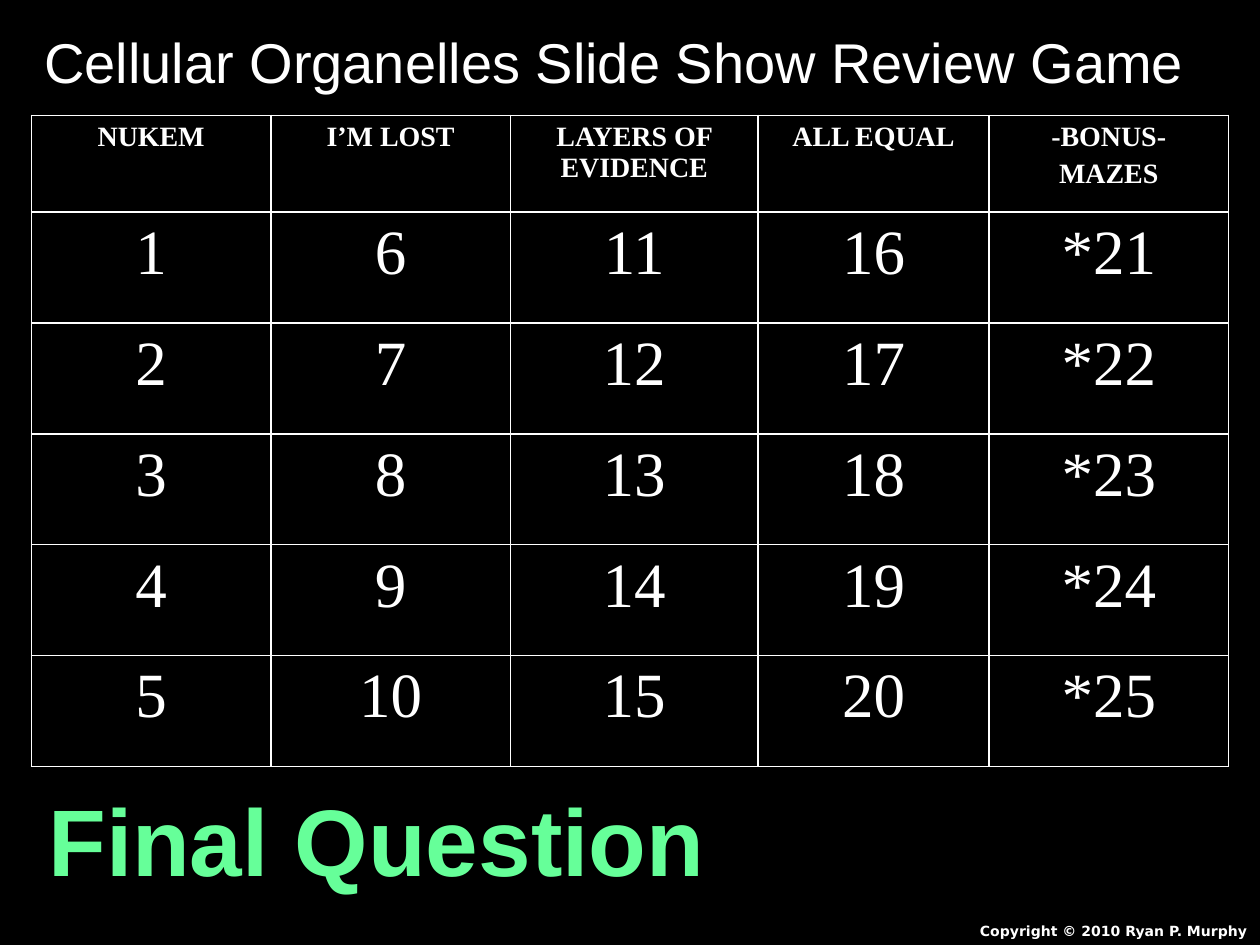
from lxml import etree
from pptx import Presentation
from pptx.dml.color import RGBColor
from pptx.enum.text import MSO_ANCHOR, PP_ALIGN
from pptx.oxml.ns import qn
from pptx.util import Pt

LEFT, MID, RIGHT = PP_ALIGN.LEFT, PP_ALIGN.CENTER, PP_ALIGN.RIGHT
TOP = MSO_ANCHOR.TOP

# Content
TITLE = "Cellular Organelles Slide Show Review Game"
HEADS = ["NUKEM", "I’M LOST", "LAYERS OF EVIDENCE", "ALL EQUAL",
         "-BONUS-\nMAZES"]
ROWS = 5
FINAL = "Final Question"
CREDIT = "Copyright © 2010 Ryan P. Murphy"

# Theme
WHITE, BLACK, GREEN = "FFFFFF", "000000", "66FF99"
THEME = {
    "title": dict(name="Arial", size=32, color=WHITE, bold=False),
    "head": dict(name="Times New Roman", size=16, color=WHITE, bold=True),
    "num": dict(name="Times New Roman", size=36, color=WHITE, bold=False),
    "final": dict(name="Arial", size=54, color=GREEN, bold=True),
    "credit": dict(name="DejaVu Sans", size=8, color=WHITE, bold=True),
}

# Layout, in points
WIDE, HIGH = 720, 540
TITLE_BOX = (18, 12.24, 702, 45.36)
FINAL_BOX = (18.72, 443.52, 393.12, 72.72)
CREDIT_BOX = (509.76, 523.44, 210.24, 16.56)
GRID_X, GRID_Y = 18, 66
COLS = [136.8, 136.8, 141.6, 132, 136.8]
HEAD_H, ROW_H = 55.2, 63.36
GAP = 0.2  # space before a table paragraph, as a share of type size


def write(frame, text, style, align, gap=0):
    """Fill a text frame and style each of its paragraphs."""
    look = THEME[style]
    frame.text = text
    for para in frame.paragraphs:
        para.alignment = align
        para.space_before = Pt(look["size"] * gap)
        font = para.runs[0].font
        values = {"name": look["name"], "size": Pt(look["size"]),
                  "bold": look["bold"]}
        for key, value in values.items():
            setattr(font, key, value)
        font.color.rgb = RGBColor.from_string(look["color"])


def edge(cell):
    """Draw a thin white line on all four sides of a cell."""
    props = cell._tc.get_or_add_tcPr()
    for spot, side in enumerate(("lnL", "lnR", "lnT", "lnB")):
        line = etree.Element(qn(f"a:{side}"), w=str(Pt(1)))
        fill = etree.SubElement(line, qn("a:solidFill"))
        etree.SubElement(fill, qn("a:srgbClr"), val=WHITE)
        props.insert(spot, line)


def place(shape, box):
    for key, value in zip(("left", "top", "width", "height"), box):
        setattr(shape, key, Pt(value))


def main():
    deck = Presentation()
    deck.slide_width, deck.slide_height = Pt(WIDE), Pt(HIGH)
    slide = deck.slides.add_slide(deck.slide_layouts[5])
    back = slide.background.fill
    back.solid()
    back.fore_color.rgb = RGBColor.from_string(BLACK)

    # Title
    title = slide.shapes.title
    place(title, TITLE_BOX)
    title.text_frame.vertical_anchor = TOP
    write(title.text_frame, TITLE, "title", LEFT)

    # Question board, numbered down each column
    size = (sum(COLS), HEAD_H + ROWS * ROW_H)
    board = slide.shapes.add_table(
        ROWS + 1, len(COLS), *map(Pt, (GRID_X, GRID_Y, *size))).table
    board.first_row = board.horz_banding = False
    for row in range(ROWS + 1):
        board.rows[row].height = Pt(ROW_H if row else HEAD_H)
    for col, width in enumerate(COLS):
        board.columns[col].width = Pt(width)
        star = "*" if col == len(COLS) - 1 else ""
        for row in range(ROWS + 1):
            cell = board.cell(row, col)
            cell.fill.background()
            edge(cell)
            text = f"{star}{col * ROWS + row}" if row else HEADS[col]
            write(cell.text_frame, text, "num" if row else "head", MID, GAP)

    # Final question and credit
    for text, style, box, align, wrap in (
            (CREDIT, "credit", CREDIT_BOX, RIGHT, True),
            (FINAL, "final", FINAL_BOX, MID, False)):
        frame = slide.shapes.add_textbox(*map(Pt, box)).text_frame
        frame.word_wrap = wrap
        write(frame, text, style, align)

    deck.save("out.pptx")


if __name__ == "__main__":
    main()
